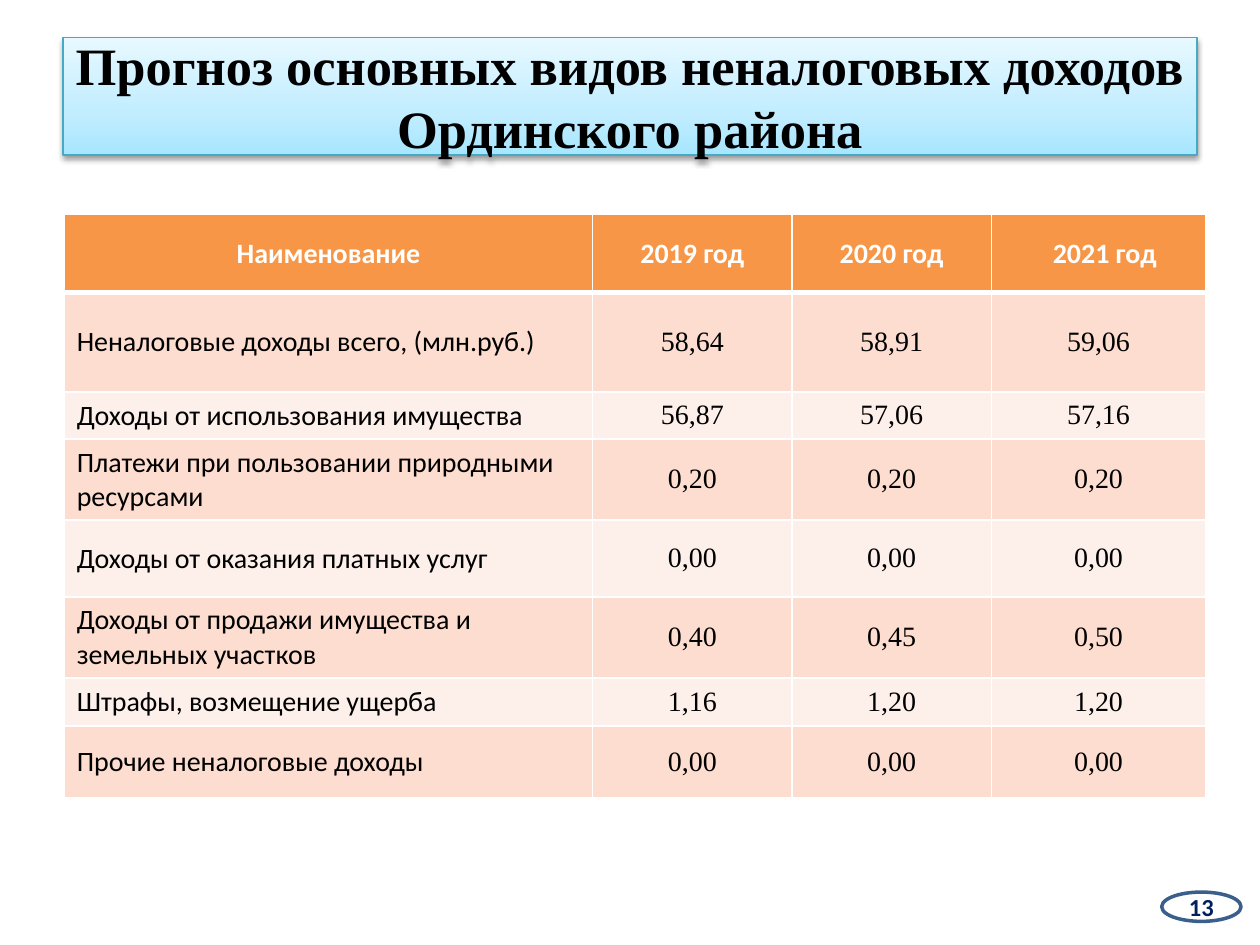
from copy import deepcopy

from lxml import etree
from pptx import Presentation
from pptx.dml.color import RGBColor
from pptx.enum.shapes import MSO_SHAPE
from pptx.enum.text import MSO_ANCHOR, PP_ALIGN
from pptx.oxml.ns import qn
from pptx.util import Inches, Pt

RECTANGLE, OVAL = MSO_SHAPE.RECTANGLE, MSO_SHAPE.OVAL
MIDDLE = MSO_ANCHOR.MIDDLE
CENTER, LEFT = PP_ALIGN.CENTER, PP_ALIGN.LEFT

SLIDE_WIDTH, SLIDE_HEIGHT = 10, 7.5
SANS, SERIF = "Calibri", "Times New Roman"
COLORS = {
    "white": "FFFFFF", "black": "000000", "navy": "002060",
    "badge_line": "3A5F8C", "title_line": "46AAC5",
    "header": "F79646", "band_dark": "FCDDCF", "band_light": "FDEFE9",
}
TITLE_GRADIENT = [(0, "A7E6FF"), (0.35, "C1EDFF"), (1, "E7F8FF")]

# Regions as shares of the slide: left, top, width, height
TITLE_BOX = (0.05, 0.04, 0.9, 0.124)
TABLE_BOX = (0.051, 0.227, 0.906, 0.616)
BADGE_BOX = (0.922, 0.944, 0.063, 0.031)

# Relative column widths and row heights
COLUMNS = [4.19, 1.58, 1.58, 1.7]
ROWS = [0.62, 0.79, 0.37, 0.64, 0.61, 0.64, 0.38, 0.57]

TITLE = "Прогноз основных видов неналоговых доходов Ординского района"
INCOME = [
    ("Наименование", "2019 год", "2020 год", "2021 год"),
    ("Неналоговые доходы всего, (млн.руб.)", "58,64", "58,91", "59,06"),
    ("Доходы от использования имущества", "56,87", "57,06", "57,16"),
    ("Платежи при пользовании природными ресурсами", "0,20", "0,20", "0,20"),
    ("Доходы от оказания платных услуг", "0,00", "0,00", "0,00"),
    ("Доходы от продажи имущества и земельных участков", "0,40", "0,45", "0,50"),
    ("Штрафы, возмещение ущерба", "1,16", "1,20", "1,20"),
    ("Прочие неналоговые доходы", "0,00", "0,00", "0,00"),
]


def color(name):
    return RGBColor.from_string(COLORS[name])


def place(box):
    left, top, width, height = box
    return (Inches(left * SLIDE_WIDTH), Inches(top * SLIDE_HEIGHT),
            Inches(width * SLIDE_WIDTH), Inches(height * SLIDE_HEIGHT))


def write(frame, text, size, font, ink, bold=False, align=CENTER):
    para = frame.paragraphs[0]
    para.alignment = align
    span = para.add_run()
    span.text = text
    span.font.size = Pt(size)
    span.font.name = font
    span.font.bold = bold
    span.font.color.rgb = color(ink)


def add_box(page, box, preset, line, weight):
    shape = page.shapes.add_shape(preset, *place(box))
    shape.shadow.inherit = False
    shape.line.color.rgb = color(line)
    shape.line.width = Pt(weight)
    shape.text_frame.vertical_anchor = MIDDLE
    return shape


def add_color(parent, name, alpha=None):
    ink = etree.SubElement(parent, qn("a:srgbClr"), val=COLORS[name])
    if alpha is not None:
        etree.SubElement(ink, qn("a:alpha"), val=str(alpha * 1000))


def add_title(page, box):
    shape = add_box(page, box, RECTANGLE, "title_line", 0.75)
    # Three-stop gradient, darkest at the bottom
    shape.fill.gradient()
    shape.fill.gradient_angle = 90
    stop_list = shape._element.spPr.find(qn("a:gradFill")).find(qn("a:gsLst"))
    stop_list.append(deepcopy(stop_list[-1]))
    for stop, (position, value) in zip(shape.fill.gradient_stops, TITLE_GRADIENT):
        stop.position = position
        stop.color.rgb = RGBColor.from_string(value)
    # Soft shadow below
    effects = shape._element.spPr.find(qn("a:effectLst"))
    shadow = etree.SubElement(
        effects, qn("a:outerShdw"), blurRad=str(Pt(3.1)), dist=str(Pt(1.6)),
        dir="5400000", rotWithShape="0")
    add_color(shadow, "black", 38)
    shape.text_frame.word_wrap = True
    write(shape.text_frame, TITLE, 30, SERIF, "black", bold=True)


def add_borders(cell, bottom):
    properties = cell._tc.get_or_add_tcPr()
    weights = {"a:lnL": 1, "a:lnR": 1, "a:lnT": 1, "a:lnB": bottom}
    for index, (tag, weight) in enumerate(weights.items()):
        line = etree.Element(qn(tag), w=str(Pt(weight)))
        add_color(etree.SubElement(line, qn("a:solidFill")), "white")
        properties.insert(index, line)


def add_income_table(page, box):
    left, top, width, height = place(box)
    table = page.shapes.add_table(
        len(ROWS), len(COLUMNS), left, top, width, height).table
    for column, share in zip(table.columns, COLUMNS):
        column.width = int(width * share / sum(COLUMNS))
    for row, share in zip(table.rows, ROWS):
        row.height = int(height * share / sum(ROWS))

    for r, values in enumerate(INCOME):
        header = r == 0
        band = "header" if header else ("band_light", "band_dark")[r % 2]
        for c, text in enumerate(values):
            cell = table.cell(r, c)
            cell.vertical_anchor = MIDDLE
            cell.fill.solid()
            cell.fill.fore_color.rgb = color(band)
            add_borders(cell, bottom=3 if header else 1)
            write(cell.text_frame, text, 16,
                  SANS if header or c == 0 else SERIF,
                  "white" if header else "black", bold=header,
                  align=CENTER if header or c else LEFT)
    # The last heading sits slightly right of centre
    table.cell(0, len(COLUMNS) - 1).margin_left = Inches(0.2)


def add_page_badge(page, box, number):
    shape = add_box(page, box, OVAL, "badge_line", 2)
    shape.fill.solid()
    shape.fill.fore_color.rgb = color("white")
    frame = shape.text_frame
    frame.word_wrap = False
    frame.margin_left = frame.margin_right = 0
    frame.margin_top = frame.margin_bottom = 0
    write(frame, number, 14, SANS, "navy", bold=True)


def main():
    deck = Presentation()
    deck.slide_width = Inches(SLIDE_WIDTH)
    deck.slide_height = Inches(SLIDE_HEIGHT)
    page = deck.slides.add_slide(deck.slide_layouts[6])
    add_page_badge(page, BADGE_BOX, "13")
    add_title(page, TITLE_BOX)
    add_income_table(page, TABLE_BOX)
    deck.save("out.pptx")


if __name__ == "__main__":
    main()
